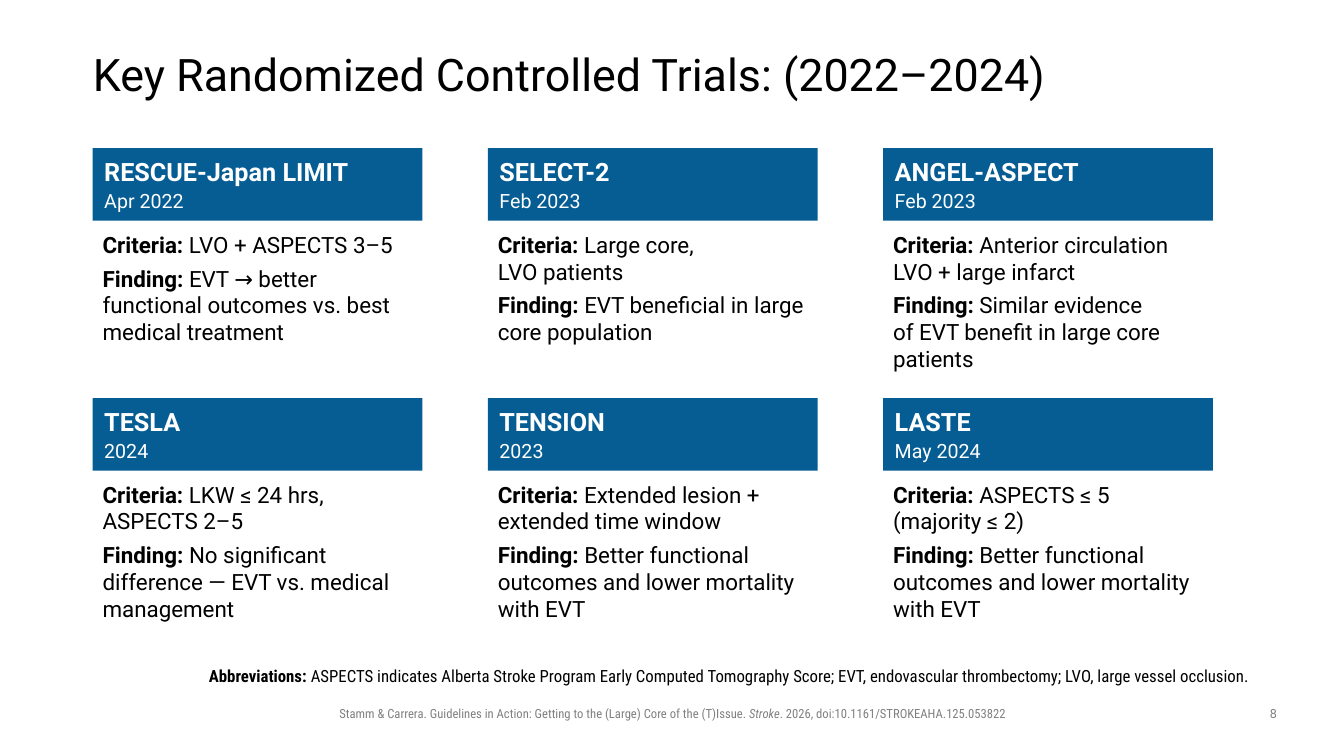
from pptx import Presentation
from pptx.dml.color import RGBColor
from pptx.enum import shapes, text
from pptx.util import Inches, Pt
from lxml import etree

BLUE = RGBColor(0x05, 0x5D, 0x93)
WHITE = RGBColor(0xFF, 0xFF, 0xFF)
BLACK = RGBColor(0, 0, 0)
GRAY = RGBColor(0x80, 0x80, 0x80)
SANS, NARROW = "Roboto", "Roboto Condensed"

# Content
TITLE = "Key Randomized Controlled Trials: (2022–2024)"
TRIALS = [  # name, date, criteria, finding
    ("RESCUE-Japan LIMIT", "Apr 2022", "LVO + ASPECTS 3–5",
     "EVT → better functional outcomes vs. best medical treatment"),
    ("SELECT-2", "Feb 2023", "Large core, \nLVO patients",
     "EVT beneficial in large core population"),
    ("ANGEL-ASPECT", "Feb 2023", "Anterior circulation LVO + large infarct",
     "Similar evidence \nof EVT benefit in large core patients"),
    ("TESLA", "2024", "LKW ≤ 24 hrs, ASPECTS 2–5",
     "No significant difference — EVT vs. medical management"),
    ("TENSION", "2023", "Extended lesion + extended time window",
     "Better functional outcomes and lower mortality with EVT"),
    ("LASTE", "May 2024", "ASPECTS ≤ 5 (majority ≤ 2)",
     "Better functional outcomes and lower mortality with EVT"),
]
ABBREVIATIONS = ("Abbreviations:", " ASPECTS indicates Alberta Stroke Program Early "
                 "Computed Tomography Score; EVT, endovascular thrombectomy; "
                 "LVO, large vessel occlusion.")
CITATION = ("Stamm & Carrera. Guidelines in Action: Getting to the (Large) Core of the "
            "(T)Issue. ", "Stroke", ". 2026, doi:10.1161/STROKEAHA.125.053822")
PAGE_NUMBER = "8"

# Grid, in inches
LEFT, TOP = 0.92, 1.47
COLUMN_STEP, ROW_STEP, COLUMNS = 3.92, 2.48, 3
CARD_WIDTH, HEADER_HEIGHT = 3.27, 0.72

deck = Presentation()
deck.slide_width, deck.slide_height = Inches(13.33), Inches(7.5)
page = deck.slides.add_slide(deck.slide_layouts[1])


def place(shape, left, top, width, height):
    shape.left, shape.top = Inches(left), Inches(top)
    shape.width, shape.height = Inches(width), Inches(height)


def add_span(para, words, size, color, font=SANS, bold=False, italic=False):
    for index, line in enumerate(words.split("\n")):
        if index:
            para.add_line_break()
        span = para.add_run()
        span.text = line
        span.font.name, span.font.size = font, Pt(size)
        span.font.bold, span.font.italic = bold, italic
        span.font.color.rgb = color


def add_box(left, top, width, height):
    box = page.shapes.add_textbox(*map(Inches, (left, top, width, height)))
    box.text_frame.word_wrap = True
    return box.text_frame


def set_margins(frame, left, top, right, bottom):
    frame.margin_left, frame.margin_top = Inches(left), Inches(top)
    frame.margin_right, frame.margin_bottom = Inches(right), Inches(bottom)
    frame.auto_size = text.MSO_AUTO_SIZE.NONE


def add_trial(left, top, name, date, criteria, finding):
    header = page.shapes.add_shape(
        shapes.MSO_SHAPE.RECTANGLE,
        *map(Inches, (left, top, CARD_WIDTH, HEADER_HEIGHT)))
    header.shadow.inherit = False
    header.fill.solid()
    header.fill.fore_color.rgb = BLUE
    header.line.fill.background()

    heading = add_box(left + 0.015, top + 0.03, 2.78, 0.67)
    para = heading.paragraphs[0]
    para.space_after = Pt(2)
    add_span(para, name, 18, WHITE, bold=True)
    add_span(heading.add_paragraph(), date, 14, WHITE)

    details = add_box(left, top + 0.77, CARD_WIDTH, 1.52)
    for para, label, words, gap in (
            (details.paragraphs[0], "Criteria: ", criteria, 5),
            (details.add_paragraph(), "Finding: ", finding, 6)):
        para.space_after = Pt(gap)
        add_span(para, label, 16, BLACK, bold=True)
        add_span(para, words, 16, BLACK)


# Title
title = page.shapes.title
place(title, LEFT, 0.4, 11.5, 0.72)
set_margins(title.text_frame, 0, 0, 0, 0)
title.text_frame.vertical_anchor = text.MSO_ANCHOR.MIDDLE
para = title.text_frame.paragraphs[0]
para.alignment, para.line_spacing = text.PP_ALIGN.LEFT, 0.9
add_span(para, TITLE, 32, BLACK)

# Trial cards
for index, trial in enumerate(TRIALS):
    row, column = divmod(index, COLUMNS)
    add_trial(LEFT + column * COLUMN_STEP, TOP + row * ROW_STEP, *trial)

# Abbreviations
body = page.placeholders[1]
place(body, 1.5, 6.52, 11.57, 0.34)
set_margins(body.text_frame, 0, 0.05, 0.1, 0.05)
body.text_frame.vertical_anchor = text.MSO_ANCHOR.BOTTOM
para = body.text_frame.paragraphs[0]
para.alignment, para.line_spacing = text.PP_ALIGN.CENTER, 0.9
para.space_before = Pt(0)
properties = para._p.get_or_add_pPr()
properties.set("marL", "0")
properties.set("indent", "0")
etree.SubElement(
    properties, "{http://schemas.openxmlformats.org/drawingml/2006/main}buNone")
for words, bold in zip(ABBREVIATIONS, (True, False)):
    add_span(para, words, 12, BLACK, NARROW, bold)

# Citation and page number
para = add_box(2.36, 6.95, 8.62, 0.25).paragraphs[0]
para.alignment = text.PP_ALIGN.CENTER
for words, italic in zip(CITATION, (False, True, False)):
    add_span(para, words, 9, GRAY, NARROW, italic=italic)
para = add_box(12.42, 6.95, 0.42, 0.26).paragraphs[0]
para.alignment = text.PP_ALIGN.CENTER
add_span(para, PAGE_NUMBER, 9, GRAY)

deck.save("out.pptx")
